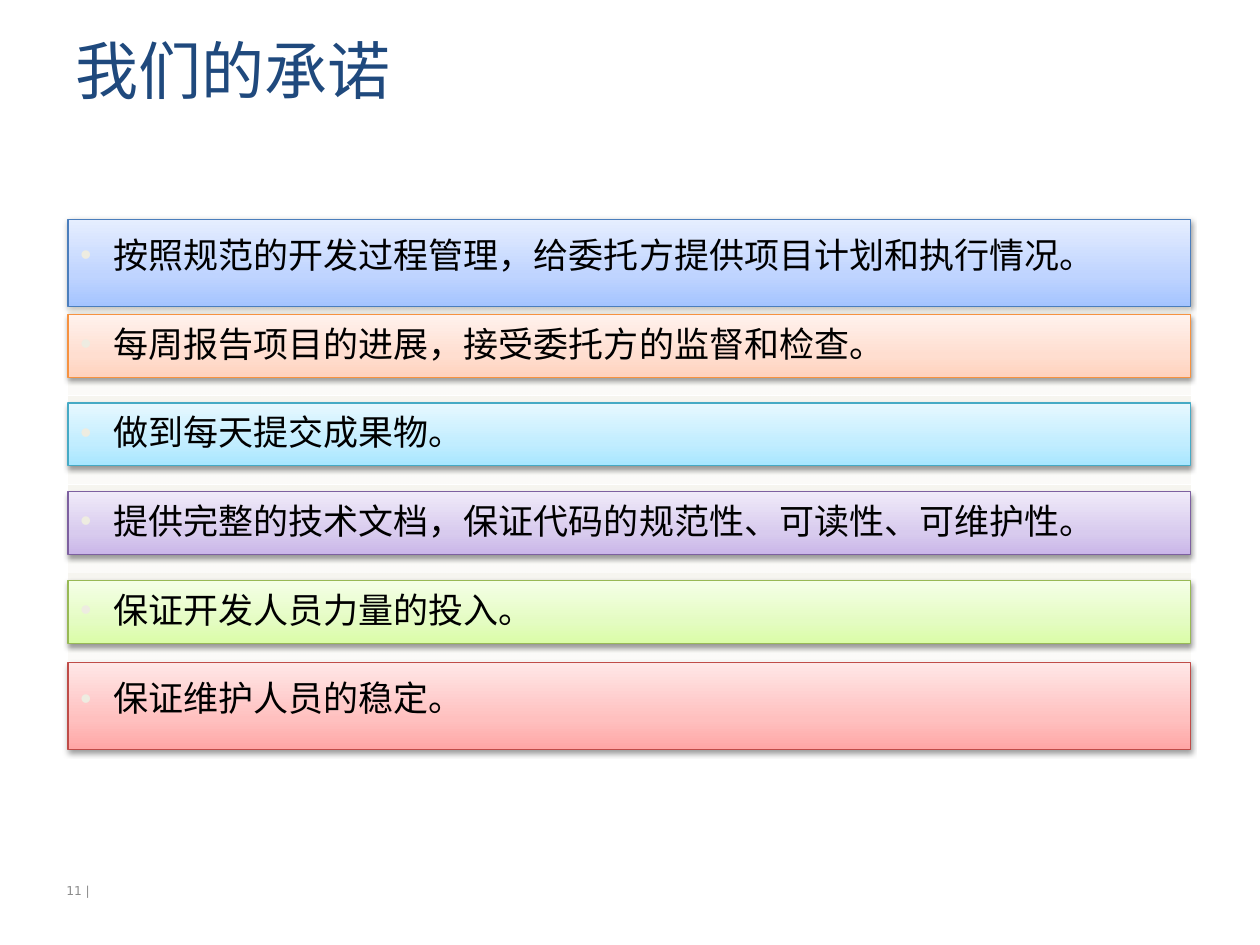
from lxml.etree import SubElement
from pptx import Presentation
from pptx.dml.color import RGBColor
from pptx.enum.shapes import MSO_SHAPE as Shape
from pptx.enum.text import MSO_ANCHOR as Anchor, MSO_AUTO_SIZE as AutoSize, PP_ALIGN as Align
from pptx.oxml.ns import qn
from pptx.util import Inches, Pt

NAVY = RGBColor(0x1F, 0x49, 0x7D)
BLACK = RGBColor(0x00, 0x00, 0x00)
GRAY = RGBColor(0x8C, 0x8C, 0x8C)
CREAM = RGBColor(0xEE, 0xEC, 0xE1)
BLUE = RGBColor(0x4B, 0x7E, 0xBC)
BLUE_TINTS = RGBColor(0xA4, 0xC4, 0xFF), RGBColor(0xBF, 0xD4, 0xFF), RGBColor(0xE6, 0xEE, 0xFF)
ORANGE = RGBColor(0xF6, 0x92, 0x40)
ORANGE_TINTS = RGBColor(0xFF, 0xD2, 0xBD), RGBColor(0xFF, 0xDE, 0xD0), RGBColor(0xFF, 0xF2, 0xED)
AQUA = RGBColor(0x46, 0xAA, 0xC5)
AQUA_TINTS = RGBColor(0xA7, 0xE6, 0xFF), RGBColor(0xC1, 0xED, 0xFF), RGBColor(0xE7, 0xF8, 0xFF)
PURPLE = RGBColor(0x7D, 0x60, 0xA0)
PURPLE_TINTS = RGBColor(0xC9, 0xB5, 0xE8), RGBColor(0xD8, 0xCB, 0xEE), RGBColor(0xF0, 0xEA, 0xF9)
GREEN = RGBColor(0x98, 0xB9, 0x55)
GREEN_TINTS = RGBColor(0xDA, 0xFD, 0xA7), RGBColor(0xE4, 0xFC, 0xC2), RGBColor(0xF5, 0xFF, 0xE7)
RED = RGBColor(0xBF, 0x4C, 0x48)
RED_TINTS = RGBColor(0xFF, 0xA6, 0xA5), RGBColor(0xFF, 0xC0, 0xBF), RGBColor(0xFF, 0xE7, 0xE7)

PROMISES = [
    ("按照规范的开发过程管理，给委托方提供项目计划和执行情况。", BLUE, BLUE_TINTS),
    ("每周报告项目的进展，接受委托方的监督和检查。", ORANGE, ORANGE_TINTS),
    ("做到每天提交成果物。", AQUA, AQUA_TINTS),
    ("提供完整的技术文档，保证代码的规范性、可读性、可维护性。", PURPLE, PURPLE_TINTS),
    ("保证开发人员力量的投入。", GREEN, GREEN_TINTS),
    ("保证维护人员的稳定。", RED, RED_TINTS),
]


def add_tag(parent, tag, **attributes):
    """Append a DrawingML element with the given attributes."""
    element = SubElement(parent, qn(tag))
    for name, value in attributes.items():
        element.set(name, str(value))
    return element


def add_color(parent, color, alpha=100):
    """Append a colour with an opacity in percent."""
    element = add_tag(parent, "a:srgbClr", val=color)
    if alpha < 100:
        add_tag(element, "a:alpha", val=alpha * 1000)


def add_panel(page, box, stops, angle):
    """Add a borderless rectangle with a gradient of (percent, colour, opacity) stops."""
    panel = page.shapes.add_shape(Shape.RECTANGLE, *box)
    panel.shadow.inherit = False
    panel.fill.background()
    panel.line.fill.background()
    properties = panel._element.spPr
    empty_fill = properties.find(qn("a:noFill"))
    gradient = add_tag(properties, "a:gradFill", rotWithShape=1)
    properties.replace(empty_fill, gradient)
    stop_list = add_tag(gradient, "a:gsLst")
    for position, color, alpha in stops:
        add_color(add_tag(stop_list, "a:gs", pos=position * 1000), color, alpha)
    add_tag(gradient, "a:lin", ang=angle * 60000, scaled=0)
    return panel


def add_bar(page, box, outline, tints):
    """Add an outlined, tinted bar with a soft shadow below it."""
    bar = add_panel(page, box, zip((0, 35, 100), tints, (100, 100, 100)), 270)
    bar.line.color.rgb = outline
    bar.line.width = Pt(0.75)
    effects = bar._element.spPr.find(qn("a:effectLst"))
    shadow = add_tag(effects, "a:outerShdw", blurRad=Pt(3.1), dist=Pt(1.6), dir=5400000, rotWithShape=0)
    add_color(shadow, BLACK, 38)
    return bar


def write_promise(shape, text):
    """Write one bulleted promise into a shape."""
    frame = shape.text_frame
    frame.word_wrap = True
    frame.auto_size = AutoSize.SHAPE_TO_FIT_TEXT
    frame.vertical_anchor = Anchor.TOP
    frame.margin_left = frame.margin_right = Inches(0.1)
    frame.margin_top = frame.margin_bottom = Inches(0.1)
    para = frame.paragraphs[0]
    para.text = text
    para.level = 1
    para.alignment = Align.LEFT
    properties = para._p.get_or_add_pPr()
    properties.set("marL", str(Inches(0.26)))
    properties.set("indent", str(-Inches(0.26)))
    add_color(add_tag(properties, "a:buClr"), CREAM)
    add_tag(properties, "a:buSzPct", val=90000)
    add_tag(properties, "a:buFont", typeface="Arial")
    add_tag(properties, "a:buChar", char="•")
    para.line_spacing = 0.9
    para.space_before = Pt(4)
    set_font(para, "Calibri", 20, BLACK)


def set_font(para, name, size, color):
    """Set the typeface, point size and colour of a paragraph."""
    para.font.name = name
    para.font.size = Pt(size)
    para.font.color.rgb = color


def add_title(page, box):
    """Add the slide title."""
    frame = page.shapes.add_textbox(*box).text_frame
    frame.word_wrap = True
    para = frame.paragraphs[0]
    para.text = "我们的承诺"
    para.line_spacing = 0.9
    set_font(para, "Calibri", 36, NAVY)


def add_promises(page, box):
    """Stack the promises, with tall bars at both ends and short bars on pale panels between."""
    left, top, width, height = box
    plate_height = Inches(0.69)
    last = len(PROMISES) - 1
    pitch = (height - plate_height) // last
    for index, (text, outline, tints) in enumerate(PROMISES):
        plate = left, top + index * pitch, width, plate_height
        inner = left, plate[1] + Inches(0.05), width, Inches(0.5)
        if index in (0, last):
            add_bar(page, plate, outline, tints)
            holder = page.shapes.add_textbox(*inner)
        else:
            add_panel(page, plate, [(0, CREAM, 50), (100, CREAM, 20)], 90)
            holder = add_bar(page, inner, outline, tints)
        write_promise(holder, text)


def add_page_number(page, box):
    """Add the page number."""
    frame = page.shapes.add_textbox(*box).text_frame
    frame.margin_left = frame.margin_right = frame.margin_top = frame.margin_bottom = 0
    frame.vertical_anchor = Anchor.MIDDLE
    para = frame.paragraphs[0]
    para.text = "11 |"
    para.alignment = Align.CENTER
    set_font(para, "DejaVu Sans", 7, GRAY)


def main():
    """Build and save the slide."""
    deck = Presentation()
    deck.slide_width, deck.slide_height = Inches(10), Inches(7.5)
    page = deck.slides.add_slide(deck.slide_layouts[6])
    add_title(page, (Inches(0.5), Inches(0.27), Inches(5.96), Inches(0.76)))
    add_promises(page, (Inches(0.54), Inches(1.74), Inches(8.91), Inches(4.21)))
    add_page_number(page, (Inches(0.49), Inches(6.96), Inches(0.26), Inches(0.22)))
    deck.save("out.pptx")


if __name__ == "__main__":
    main()
